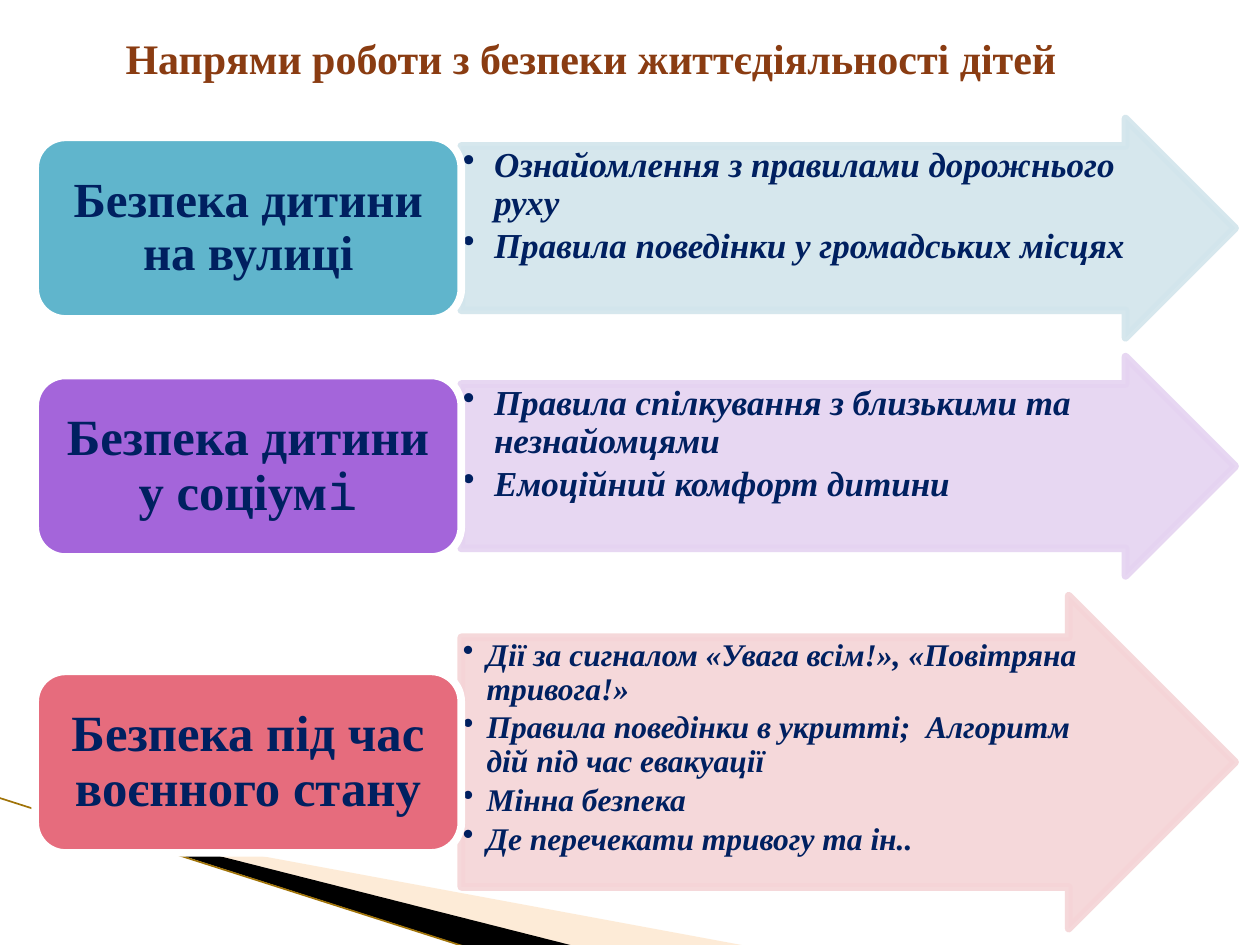
import pptx
import pptx.dml.color
import pptx.enum.shapes
import pptx.enum.text
import pptx.oxml
import pptx.oxml.ns
import pptx.util
from lxml import etree

Cm = pptx.util.Cm
Pt = pptx.util.Pt
Color = pptx.dml.color.RGBColor.from_string
Shape = pptx.enum.shapes.MSO_SHAPE
Align = pptx.enum.text.PP_ALIGN
Anchor = pptx.enum.text.MSO_ANCHOR
qn = pptx.oxml.ns.qn

THEME = {
    "title": "8A3C12", "text": "002060", "outline": "FFFFFF",
    "wedge": "000000", "glow": "FCCF9B", "edge": "A07308",
    "font": "Times New Roman", "mono": "Noto Sans Mono",
    "title_size": 24, "outline_width": 4.33, "edge_width": 0.95,
}


def set_opacity(shape, percent):
    for color in shape._element.spPr.iter(qn("a:srgbClr")):
        etree.SubElement(color, qn("a:alpha"), val=str(percent * 1000))


def add_run(paragraph, text, size, color=THEME["text"], **changes):
    run = paragraph.add_run()
    run.text = text
    run.font.color.rgb = Color(color)
    values = {"name": THEME["font"], "size": Pt(size), "bold": True, **changes}
    for name, value in values.items():
        setattr(run.font, name, value)


presentation = pptx.Presentation()
presentation.slide_width = Cm(25.4)
presentation.slide_height = Cm(19.05)
slide = presentation.slides.add_slide(presentation.slide_layouts[6])
shapes = slide.shapes

wedges = [
    ("glow", 40, [(1.4, 16.54), (15.11, 19.08), (11.58, 19.08), (1.4, 16.51)]),
    ("wedge", 100, [(1.35, 16.48), (11.61, 19.08), (9.45, 19.1), (1.37, 16.51)]),
]
for color, opacity, points in wedges:
    corners = [(Cm(x), Cm(y)) for x, y in points]
    builder = shapes.build_freeform(*corners[0])
    builder.add_line_segments(corners[1:], close=True)
    wedge = builder.convert_to_shape()
    wedge.shadow.inherit = False
    wedge.fill.solid()
    wedge.fill.fore_color.rgb = Color(THEME[color])
    wedge.line.fill.background()
    if opacity < 100:
        set_opacity(wedge, opacity)

edge = shapes.add_connector(
    pptx.enum.shapes.MSO_CONNECTOR.STRAIGHT, Cm(-0.03), Cm(16.08), Cm(9.42), Cm(19.1)
)
edge.line.color.rgb = Color(THEME["edge"])
edge.line.width = Pt(THEME["edge_width"])
etree.SubElement(edge._element.spPr, qn("a:effectLst"))

directions = [
    {"top": 2.39, "height": 4.42, "arrow": "D2E5EC", "box": "60B5CC",
     "heading": "Безпека дитини на вулиці", "ending": "", "heading_size": 28,
     "size": 20, "indent": 0.63,
     "topics": ["Ознайомлення з правилами дорожнього руху",
                "Правила поведінки у громадських місцях"]},
    {"top": 7.19, "height": 4.42, "arrow": "E5D3F1", "box": "A465DA",
     "heading": "Безпека дитини у соціум", "ending": "і", "heading_size": 29,
     "size": 20, "indent": 0.63,
     "topics": ["Правила спілкування з близькими та незнайомцями",
                "Емоційний комфорт дитини"]},
    {"top": 12.01, "height": 6.71, "arrow": "F5D4D7", "box": "E66C7D",
     "heading": "Безпека під час воєнного стану", "ending": "", "heading_size": 29,
     "size": 18, "indent": 0.48,
     "topics": ["Дії за сигналом «Увага всім!», «Повітряна тривога!»",
                "Правила поведінки в укритті;  Алгоритм дій під час евакуації",
                "Мінна безпека",
                "Де перечекати тривогу та ін.."]},
]
box_left, box_width, box_height = 0.71, 8.59, 3.66
arrow_left, arrow_width = box_left + box_width, 15.6

for direction in directions:
    top, height = direction["top"], direction["height"]
    arrow = shapes.add_shape(
        Shape.RIGHT_ARROW, Cm(arrow_left), Cm(top), Cm(arrow_width), Cm(height)
    )
    arrow.adjustments[0] = 0.75
    box = shapes.add_shape(
        Shape.ROUNDED_RECTANGLE, Cm(box_left), Cm(top + (height - box_height) / 2),
        Cm(box_width), Cm(box_height)
    )
    styles = [
        (arrow, direction["arrow"], direction["arrow"], Anchor.TOP, 0.03, 0.03),
        (box, direction["box"], THEME["outline"], Anchor.MIDDLE, 0.3, 0.15),
    ]
    for shape, fill, outline, anchor, side, edge_gap in styles:
        shape.shadow.inherit = False
        shape.fill.solid()
        shape.fill.fore_color.rgb = Color(fill)
        shape.line.color.rgb = Color(outline)
        shape.line.width = Pt(THEME["outline_width"])
        frame_format = {
            "word_wrap": True, "vertical_anchor": anchor,
            "margin_left": Cm(side), "margin_right": Cm(side),
            "margin_top": Cm(edge_gap), "margin_bottom": Cm(edge_gap),
        }
        for name, value in frame_format.items():
            setattr(shape.text_frame, name, value)
    set_opacity(arrow, 90)

    frame = arrow.text_frame
    for index, topic in enumerate(direction["topics"]):
        paragraph = frame.add_paragraph() if index else frame.paragraphs[0]
        paragraph_format = {
            "level": 1, "alignment": Align.LEFT, "line_spacing": 0.9,
            "space_after": Pt(direction["size"] * 0.15),
        }
        for name, value in paragraph_format.items():
            setattr(paragraph, name, value)
        properties = paragraph._p.get_or_add_pPr()
        properties.set("marL", str(Cm(direction["indent"])))
        properties.set("indent", str(-Cm(direction["indent"])))
        etree.SubElement(properties, qn("a:buChar"), char="•")
        add_run(paragraph, topic, direction["size"], italic=True)

    paragraph = box.text_frame.paragraphs[0]
    paragraph.alignment = Align.CENTER
    paragraph.line_spacing = 0.9
    add_run(paragraph, direction["heading"], direction["heading_size"])
    if direction["ending"]:
        add_run(paragraph, direction["ending"], direction["heading_size"],
                name=THEME["mono"], bold=False)

title = shapes.add_textbox(Cm(1.3), Cm(0.33), Cm(21.44), Cm(1.65))
title.text_frame.word_wrap = True
title.text_frame.vertical_anchor = Anchor.MIDDLE
paragraph = title.text_frame.paragraphs[0]
paragraph.alignment = Align.CENTER
add_run(paragraph, "Напрями роботи з безпеки життєдіяльності дітей ",
        THEME["title_size"], THEME["title"])

presentation.save("out.pptx")
